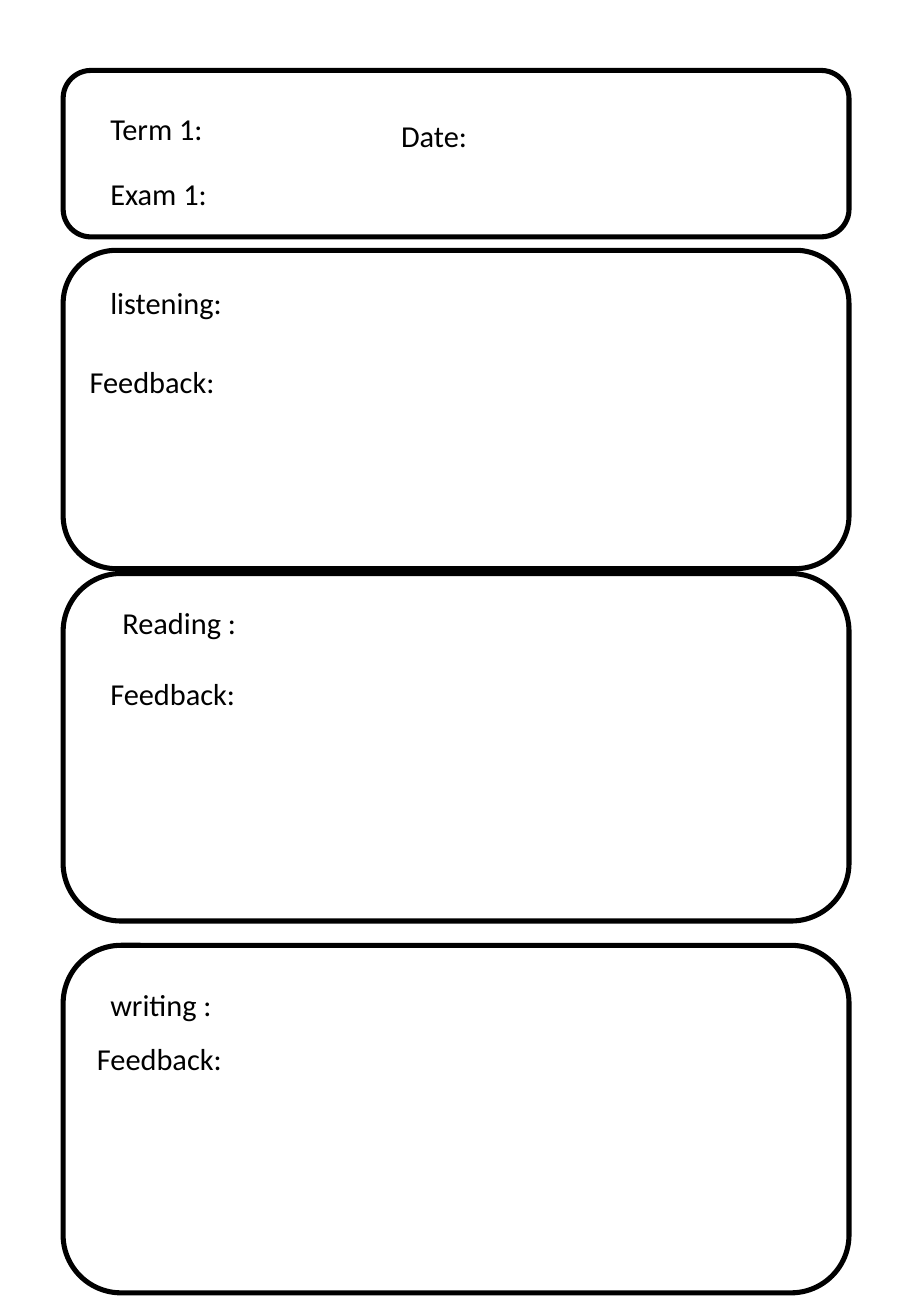
from pptx import Presentation
from pptx.dml.color import RGBColor
from pptx.enum.shapes import MSO_SHAPE
from pptx.enum.text import MSO_ANCHOR, MSO_AUTO_SIZE, PP_ALIGN
from pptx.util import Inches, Pt

BLACK = RGBColor(0, 0, 0)
WHITE = RGBColor(255, 255, 255)
ROUND = MSO_SHAPE.ROUNDED_RECTANGLE
MIDDLE = MSO_ANCHOR.MIDDLE
CENTER = PP_ALIGN.CENTER
GROW = MSO_AUTO_SIZE.SHAPE_TO_FIT_TEXT
FONT = {"name": "Calibri", "size": Pt(18)}

WIDTH, HEIGHT = 7.5, 10.83
LEFT, WIDE = 0.52, 6.47
COL = 0.81

# Each panel: top, height, labels as (text, left, drop below the panel's top)
PANELS = [
    (0.58, 1.37, [("Term 1:", COL, 0.28), ("Exam 1:", COL, 0.81)]),
    (2.06, 2.62, [("listening:", COL, 0.23), ("Feedback:", 0.64, 0.88)]),
    (4.72, 2.86, [("Reading :", 0.91, 0.2), ("Feedback:", COL, 0.79)]),
    (7.78, 2.86, [("writing :", COL, 0.29), ("Feedback:", 0.7, 0.73)]),
]


def write(frame, text):
    para = frame.paragraphs[0]
    run = para.add_run()
    run.text = text
    for key, value in FONT.items():
        setattr(run.font, key, value)
    run.font.color.rgb = BLACK
    return para


deck = Presentation()
deck.slide_width, deck.slide_height = Inches(WIDTH), Inches(HEIGHT)
slide = deck.slides.add_slide(deck.slide_layouts[6])
shapes = slide.shapes

panels = []
for top, high, labels in PANELS:
    panel = shapes.add_shape(
        ROUND, Inches(LEFT), Inches(top), Inches(WIDE), Inches(high))
    panel.shadow.inherit = False
    panel.fill.solid()
    panel.fill.fore_color.rgb = WHITE
    panel.line.color.rgb = BLACK
    panel.line.width = Pt(3)
    panels.append(panel)

    for text, left, drop in labels:
        label = shapes.add_textbox(
            Inches(left), Inches(top + drop), Inches(1.56), Inches(0.4))
        frame = label.text_frame
        frame.word_wrap = True
        frame.auto_size = GROW
        write(frame, text)

# The date sits up and left of the header's centre, moved by its insets
head = panels[0].text_frame
head.vertical_anchor = MIDDLE
head.margin_right = Inches(0.46)
head.margin_bottom = Inches(0.35)
write(head, "Date:").alignment = CENTER

deck.save("out.pptx")
